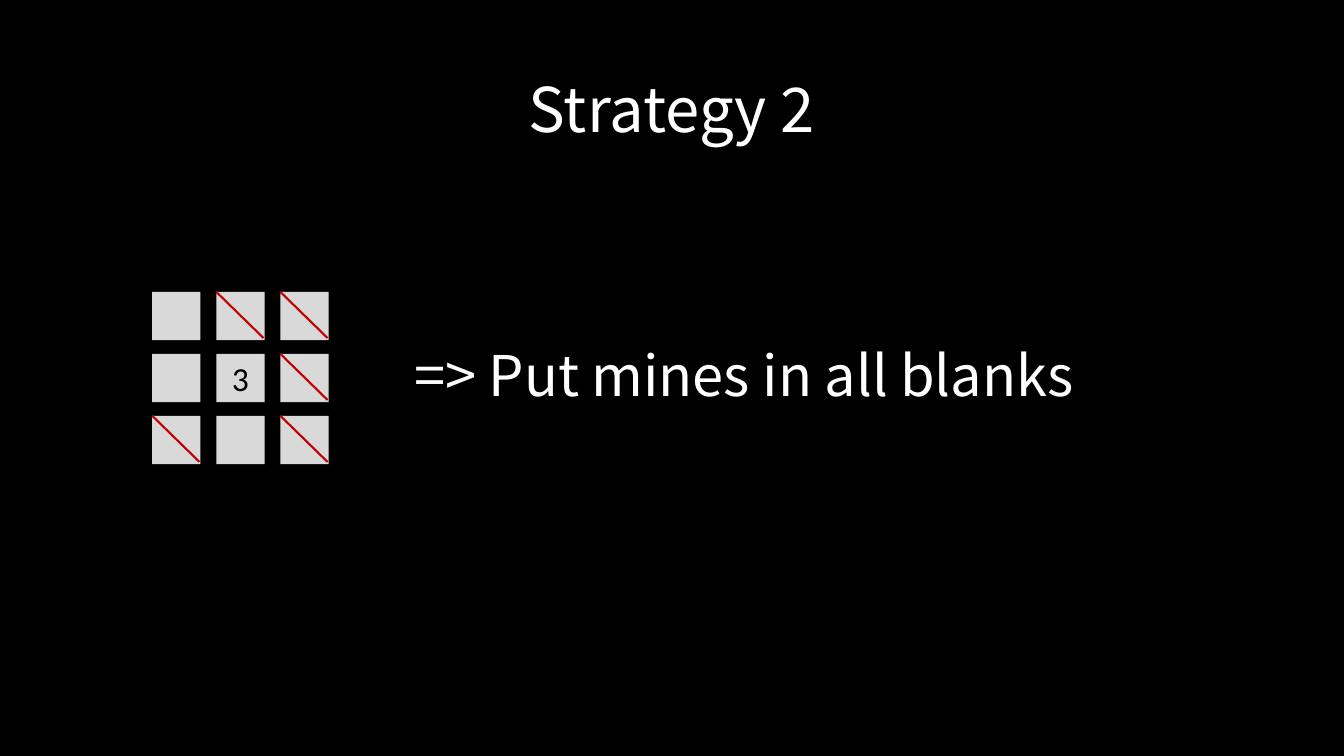
from lxml import etree
from pptx import Presentation
from pptx.dml.color import RGBColor as RGB
from pptx.enum.shapes import MSO_CONNECTOR as LINE, MSO_SHAPE as SHAPE
from pptx.enum.text import MSO_ANCHOR as ANCHOR, PP_ALIGN as ALIGN
from pptx.oxml.ns import qn
from pptx.util import Pt

PX = 9525
COLORS = {"back": "000000", "text": "FFFFFF", "cell": "D9D9D9",
          "number": "000000", "strike": "C00000"}
FONT = "Noto Sans CJK KR"
BOARD = ["./ /", ".3/", "/./"]
BOARD = [".//", ".3/", "/./"]


def color(name):
    """Return the named colour."""
    return RGB.from_string(COLORS[name])


def px(*lengths):
    """Turn pixel lengths into EMU."""
    return [n * PX for n in lengths]


def write(sp, text, size, font, ink, align):
    """Write one vertically centred paragraph into a shape."""
    tf = sp.text_frame
    tf.word_wrap = True
    tf.vertical_anchor = ANCHOR.MIDDLE
    p = tf.paragraphs[0]
    p.text = text
    p.alignment = align
    p.font.size = Pt(size)
    p.font.name = font
    p.font.color.rgb = color(ink)
    return p


def add_text(s, box, text, size, align):
    """Place a line of slide text in its box."""
    p = write(s.shapes.add_textbox(*px(*box)), text, size, FONT, "text", align)
    p.line_spacing = 0.9


def add_cell(shapes, x, y, side, mark):
    """Draw one square of the board with its number, if any."""
    sp = shapes.add_shape(SHAPE.RECTANGLE, *px(x, y, side, side))
    sp.shadow.inherit = False
    sp.fill.solid()
    sp.fill.fore_color.rgb = color("cell")
    sp.line.fill.background()
    if mark.isdigit():
        write(sp, mark, 24, "Calibri", "number", ALIGN.CENTER)


def add_strike(shapes, x, y, w, h):
    """Cross out a square from corner to corner."""
    line = shapes.add_connector(LINE.STRAIGHT, *px(x + w, y + h, x, y))
    line.line.color.rgb = color("strike")
    line.line.width = Pt(1.5)
    etree.SubElement(line._element.spPr, qn("a:effectLst"))


def add_board(s, left, top, side=46, step_x=61, step_y=59):
    """Draw the grouped minefield: squares first, then strikes."""
    shapes = s.shapes.add_group_shape().shapes
    cells = [(left + col * step_x, top + row * step_y, mark)
             for row, marks in enumerate(BOARD)
             for col, mark in enumerate(marks)]
    for x, y, mark in cells:
        add_cell(shapes, x, y, side, mark)
    for x, y, mark in cells:
        if mark == "/":
            add_strike(shapes, x, y, side - 1, side - 2)


def main():
    """Build the strategy slide."""
    prs = Presentation()
    prs.slide_width, prs.slide_height = px(1280, 720)
    s = prs.slides.add_slide(prs.slide_layouts[6])
    s.background.fill.solid()
    s.background.fill.fore_color.rgb = color("back")
    add_text(s, (88, 38, 1104, 139), "Strategy 2", 44, ALIGN.CENTER)
    add_text(s, (385, 290, 750, 140), "=> Put mines in all blanks", 40, ALIGN.LEFT)
    add_board(s, 145, 278)
    prs.save("out.pptx")


if __name__ == "__main__":
    main()
